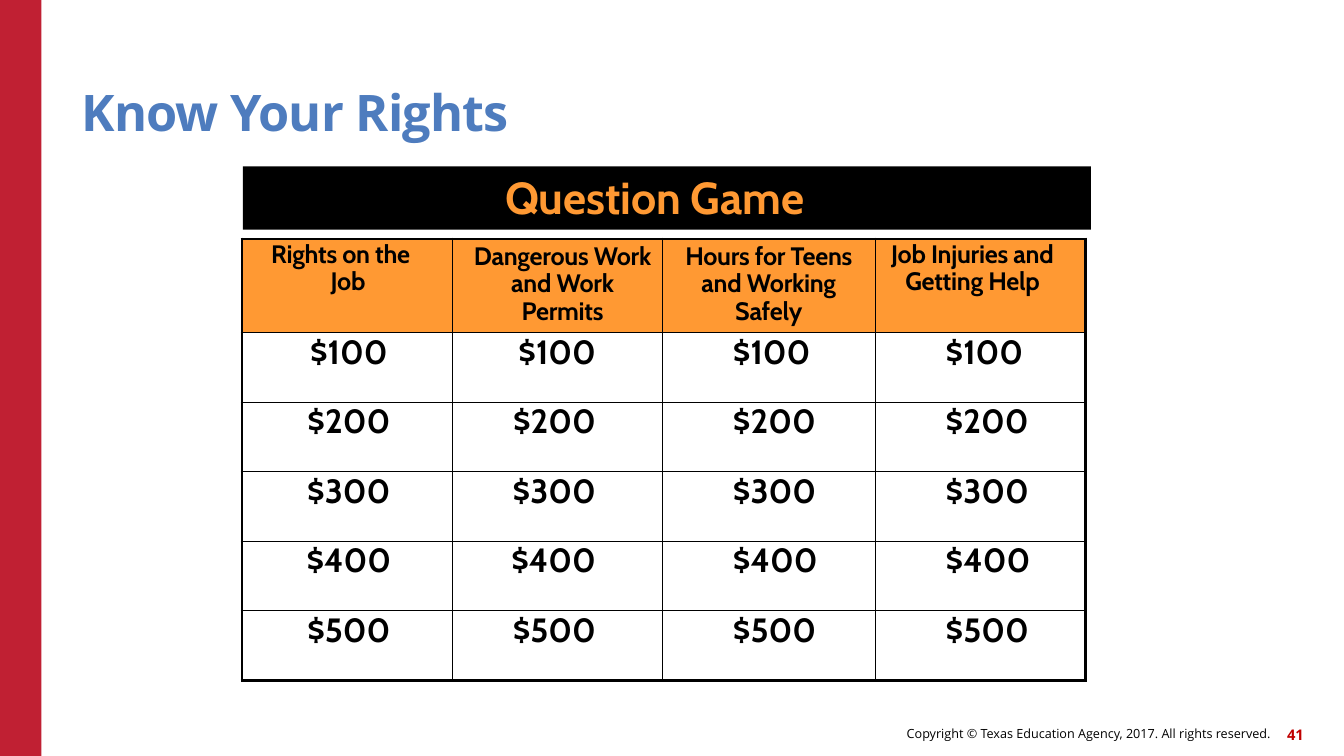
from lxml.etree import SubElement
from pptx import Presentation
from pptx.dml.color import RGBColor
from pptx.enum.shapes import MSO_SHAPE
from pptx.enum.text import MSO_ANCHOR, PP_ALIGN
from pptx.oxml.ns import qn
from pptx.util import Emu, Inches, Pt

WIDE, HIGH = 13.33, 7.5
HUES = {"red": "C02033", "number": "C00000", "blue": "4E7CBE",
        "orange": "FF9933", "black": "000000"}
LEFT, MID, RIGHT = PP_ALIGN.LEFT, PP_ALIGN.CENTER, PP_ALIGN.RIGHT

TITLE = "Know Your Rights"
BANNER = "Question Game"
RIGHTS = "Copyright © Texas Education Agency, 2017. All rights reserved."
PAGE = "41"
TOPICS = [
    ("Rights on the\vJob", dict(left=0.88, hang=-0.59, line=Pt(19.4))),
    ("Dangerous Work\vand Work\vPermits", dict(align=MID, left=0.1, line=0.9)),
    ("Hours for Teens\vand Working\vSafely", dict(align=MID, line=0.9)),
    ("Job Injuries and\vGetting Help", dict(left=0.3, hang=-0.14, line=Pt(19.4))),
]
PRIZES = ["$100", "$200", "$300", "$400", "$500"]
PLACES = [dict(align=MID, left=0.03), dict(align=RIGHT),
          dict(left=0.7), dict(left=0.7)]
COLS = [2.09, 2.08, 2.11, 2.09]
ROWS = [0.93] + [0.69] * len(PRIZES)
INSET = 0.66
THICK, THIN = 2.25, 1


def tint(hue):
    return RGBColor.from_string(HUES[hue])


def put(frame, text, size=18, font="Cabin", hue="black", bold=True,
        align=LEFT, left=0, hang=0, line=None, track=0):
    para = frame.paragraphs[0]
    para.text = text
    para.alignment = align
    if line:
        para.line_spacing = line
    props = para._p.get_or_add_pPr()
    props.set("marL", str(Inches(left)))
    props.set("indent", str(Inches(hang)))
    for run in para.runs:
        run.font.size, run.font.name, run.font.bold = Pt(size), font, bold
        run.font.color.rgb = tint(hue)
        run._r.get_or_add_rPr().set("spc", str(round(track * 100)))


def clear(box, top=0):
    box.margin_left = box.margin_right = box.margin_bottom = Emu(0)
    box.margin_top = Inches(top)


def label(slide, spot, text, anchor=MSO_ANCHOR.MIDDLE, **style):
    frame = slide.shapes.add_textbox(*map(Inches, spot)).text_frame
    frame.word_wrap = True
    frame.vertical_anchor = anchor
    clear(frame)
    put(frame, text, font="Open Sans", **style)


def block(slide, spot, hue):
    shape = slide.shapes.add_shape(MSO_SHAPE.RECTANGLE, *map(Inches, spot))
    shape.shadow.inherit = False
    shape.fill.solid()
    shape.fill.fore_color.rgb = tint(hue)
    shape.line.fill.background()
    return shape


def edge(cell, row, col):
    outer = {"L": col == 0, "R": col == len(COLS) - 1,
             "T": row == 0, "B": row == len(ROWS) - 1}
    props = cell._tc.get_or_add_tcPr()
    for side, rim in outer.items():
        line = SubElement(props, qn("a:ln" + side),
                          w=str(Pt(THICK if rim else THIN)))
        fill = SubElement(line, qn("a:solidFill"))
        SubElement(fill, qn("a:srgbClr"), val=HUES["black"])


def board(slide, left, top):
    grid = slide.shapes.add_table(
        len(ROWS), len(COLS), Inches(left), Inches(top),
        Inches(sum(COLS)), Inches(sum(ROWS))).table
    for col, width in zip(grid.columns, COLS):
        col.width = Inches(width)
    for row, height in zip(grid.rows, ROWS):
        row.height = Inches(height)
    lines = [TOPICS] + [[(prize, place) for place in PLACES]
                        for prize in PRIZES]
    for r, items in enumerate(lines):
        for c, (text, place) in enumerate(items):
            cell = grid.cell(r, c)
            edge(cell, r, c)
            if r == 0:
                clear(cell, 0.04)
                cell.fill.solid()
                cell.fill.fore_color.rgb = tint("orange")
                put(cell.text_frame, text, track=-0.2, **place)
            else:
                clear(cell)
                cell.fill.background()
                if place.get("align") == RIGHT:
                    cell.margin_right = Inches(INSET)
                put(cell.text_frame, text, size=24, line=Pt(28.6), **place)


def main():
    deck = Presentation()
    deck.slide_width, deck.slide_height = Inches(WIDE), Inches(HIGH)
    slide = deck.slides.add_slide(deck.slide_layouts[6])
    block(slide, (0, 0, 0.41, HIGH), "red")
    label(slide, (6.14, 7.12, 6.46, 0.32), RIGHTS, size=9, bold=False,
          align=RIGHT)
    label(slide, (12.51, 7.13, 0.42, 0.32), PAGE, size=10.5, hue="number",
          align=RIGHT)
    label(slide, (0.81, 0.45, 11, 0.96), TITLE, anchor=MSO_ANCHOR.BOTTOM,
          size=36, hue="blue", line=0.9, track=-0.6)
    board(slide, 2.4, 2.37)
    frame = block(slide, (2.41, 1.65, 8.41, 0.63), "black").text_frame
    frame.word_wrap = True
    frame.vertical_anchor = MSO_ANCHOR.TOP
    clear(frame, 0.03)
    put(frame, BANNER, size=32, hue="orange", left=2.6, track=-0.1)
    deck.save("out.pptx")


if __name__ == "__main__":
    main()
